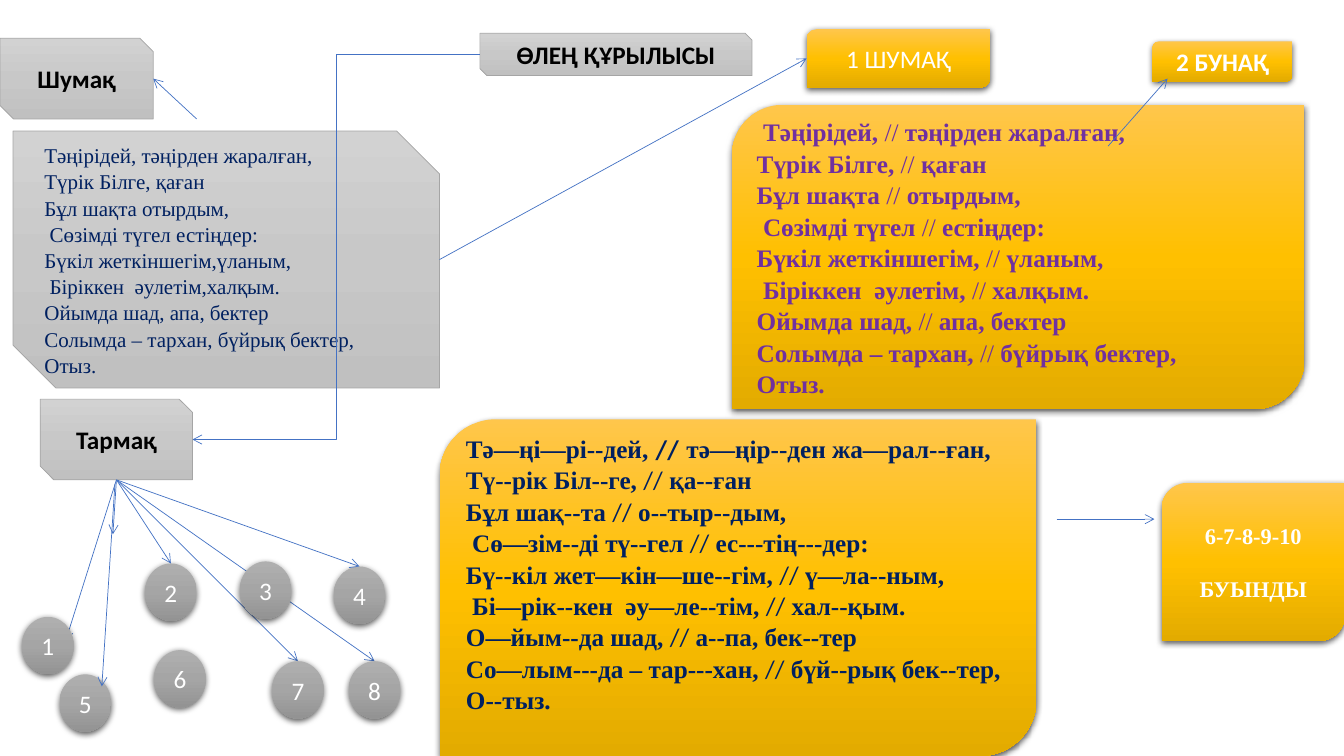
from copy import deepcopy

from lxml import etree
from pptx import Presentation, util as u
from pptx.dml.color import RGBColor
from pptx.enum import shapes, text
from pptx.oxml.ns import qn

PX = 9144
WHITE = RGBColor(0xFF, 0xFF, 0xFF)
BLACK = RGBColor(0x00, 0x00, 0x00)
NAVY = RGBColor(0x00, 0x20, 0x60)
PURPLE = RGBColor(0x70, 0x30, 0xA0)
BLUE = RGBColor(0x44, 0x72, 0xC4)
GREY = RGBColor(0xA5, 0xA5, 0xA5)
SILVER_STOPS = (RGBColor(0xD2, 0xD2, 0xD2), RGBColor(0xC8, 0xC8, 0xC8), RGBColor(0xC0, 0xC0, 0xC0))
GOLD_STOPS = (RGBColor(0xFF, 0xC6, 0x4B), RGBColor(0xFF, 0xC0, 0x00), RGBColor(0xE3, 0xAB, 0x00))
BALL_STOPS = (RGBColor(0xAF, 0xAF, 0xAF), GREY, RGBColor(0x93, 0x93, 0x93))
SANS, SERIF = "Calibri", "Times New Roman"
SNIP = shapes.MSO_SHAPE.SNIP_2_DIAG_RECTANGLE
ROUND = shapes.MSO_SHAPE.ROUND_2_DIAG_RECTANGLE
OVAL = shapes.MSO_SHAPE.OVAL
TOP, LEFT, BOTTOM, RIGHT = range(4)
SIDE_SHARES = {TOP: (0.5, 0), LEFT: (0, 0.5), BOTTOM: (0.5, 1), RIGHT: (1, 0.5)}

VERSE = """Тәңірідей, тәңірден жаралған,
Түрік Білге, қаған
Бұл шақта отырдым,
 Сөзімді түгел естіңдер:
Бүкіл жеткіншегім,үланым,
 Біріккен  әулетім,халқым.
Ойымда шад, апа, бектер
Солымда – тархан, бүйрық бектер,
Отыз.""".split("\n")
FEET = """ Тәңірідей, // тәңірден жаралған,
Түрік Білге, // қаған
Бұл шақта // отырдым,
 Сөзімді түгел // естіңдер:
Бүкіл жеткіншегім, // үланым,
 Біріккен  әулетім, // халқым.
Ойымда шад, // апа, бектер
Солымда – тархан, // бүйрық бектер,
Отыз.""".split("\n")
SYLLABLES = """Тә—ңі—рі--дей, // тә—ңір--ден жа—рал--ған,
Тү--рік Біл--ге, // қа--ған
Бұл шақ--та // о--тыр--дым,
 Сө—зім--ді тү--гел // ес---тің---дер:
Бү--кіл жет—кін—ше--гім, // ү—ла--ным,
 Бі—рік--кен  әу—ле--тім, // хал--қым.
О—йым--да шад, // а--па, бек--тер
Со—лым---да – тар---хан, // бүй--рық бек--тер,
О--тыз.""".split("\n")
BALLS = {1: (22, 612), 2: (144, 559), 3: (238, 557), 4: (331, 562),
         5: (59, 669), 6: (153, 645), 7: (270, 656), 8: (346, 656)}


def paint(shape, stops):
    """Fill a shape with a vertical gradient of three colours."""
    shape.fill.gradient()
    shape.fill.gradient_angle = 270
    stop_list = shape._element.spPr.find(".//" + qn("a:gsLst"))
    stop_list.insert(1, deepcopy(stop_list[0]))
    for stop, color, position in zip(shape.fill.gradient_stops, stops, (0, 0.5, 1)):
        stop.color.rgb = color
        stop.position = position


def add_box(page, kind, box, stops):
    """Add a gradient box: outlined when snipped, otherwise with a soft shadow."""
    shape = page.shapes.add_shape(kind, *(side * PX for side in box))
    paint(shape, stops)
    shape.shadow.inherit = False
    if kind == SNIP:
        shape.line.color.rgb = GREY
        shape.line.width = u.Pt(0.5)
        return shape
    shape.line.fill.background()
    effects = shape._element.spPr.find(qn("a:effectLst"))
    shadow = etree.SubElement(effects, qn("a:outerShdw"), blurRad="57150", dist="19050",
                              dir="5400000", algn="ctr", rotWithShape="0")
    color = etree.SubElement(shadow, qn("a:srgbClr"), val="000000")
    etree.SubElement(color, qn("a:alpha"), val="63000")
    return shape


def style(span, font, size, color, bold):
    """Format one run."""
    span.font.name, span.font.size = font, u.Pt(size)
    span.font.color.rgb, span.font.bold = color, bold


def write_label(shape, label, color=WHITE, bold=False, font=SANS, size=18, gap=0):
    """Write centred lines into a shape, with a gap in points between them."""
    frame = shape.text_frame
    frame.text = label
    frame.word_wrap = True
    frame.vertical_anchor = text.MSO_ANCHOR.MIDDLE
    for number, para in enumerate(frame.paragraphs):
        para.alignment = text.PP_ALIGN.CENTER
        para.space_before = u.Pt(gap if number else 0)
        style(para.runs[0], font, size, color, bold)


def add_verse(page, kind, box, stops, lines, size, color, bold, slash_fonts=(SERIF, SERIF)):
    """Add a card of verse whose slashes stay light, the first in a font of its own."""
    card = add_box(page, kind, box, stops)
    frame = card.text_frame
    frame.word_wrap = True
    frame.vertical_anchor = text.MSO_ANCHOR.MIDDLE
    for number, line in enumerate(lines):
        para = frame.add_paragraph() if number else frame.paragraphs[0]
        para.alignment = text.PP_ALIGN.LEFT
        para.line_spacing = 1.04
        for part in filter(None, line.partition("//")):
            span = para.add_run()
            span.text = part
            is_slash = part == "//"
            font = slash_fonts[min(number, 1)] if is_slash else SERIF
            style(span, font, size, color, bold and not is_slash)
    return card


def locate(end):
    """Give the position of an end: a point in px, or a shape and its side."""
    if isinstance(end[0], int):
        return [length * PX for length in end]
    shape, side = end
    across, down = SIDE_SHARES[side]
    return [int(shape.left + shape.width * across), int(shape.top + shape.height * down)]


def add_arrow(page, start, end, kind=shapes.MSO_CONNECTOR.STRAIGHT, behind=False):
    """Draw a thin arrow, joined to the shapes it touches."""
    arrow = page.shapes.add_connector(kind, *locate(start), *locate(end))
    arrow.line.color.rgb = BLUE
    arrow.line.width = u.Pt(0.5)
    etree.SubElement(arrow.line._get_or_add_ln(), qn("a:tailEnd"), type="arrow")
    etree.SubElement(arrow._element.spPr, qn("a:effectLst"))
    joints = arrow._element.nvCxnSpPr.cNvCxnSpPr
    for place, connect, name in ((start, arrow.begin_connect, "stCxn"),
                                 (end, arrow.end_connect, "endCxn")):
        if not isinstance(place[0], int):
            shape, side = place
            connect(shape, side)
            if shape.auto_shape_type != OVAL:
                getattr(joints, name).idx = 3 - side
    if behind:
        page.shapes._spTree.insert(2, arrow._element)


def add_heading(page, box):
    """Place the title on its plate and return the plate."""
    plate = add_box(page, SNIP, box, SILVER_STOPS)
    title = page.shapes.title
    title.left, title.top, title.width, title.height = (side * PX for side in box)
    write_label(title, "ӨЛЕҢ ҚҰРЫЛЫСЫ", BLACK, True)
    title.text_frame.auto_size = text.MSO_AUTO_SIZE.NONE
    page.shapes._spTree.append(title._element)
    return plate


def add_stanza(page, heading):
    """Add the stanza on the left with its two grey labels."""
    stanza = add_box(page, SNIP, (0, 38, 152, 80), SILVER_STOPS)
    write_label(stanza, "Шумақ", BLACK, True)
    verse = add_verse(page, SNIP, (13, 130, 423, 255), SILVER_STOPS, VERSE, 15, NAVY, False)
    row = add_box(page, SNIP, (40, 396, 151, 80), SILVER_STOPS)
    write_label(row, "Тармақ", BLACK, True)
    add_arrow(page, (195, 118), (stanza, RIGHT))
    add_arrow(page, (heading, LEFT), (row, RIGHT), shapes.MSO_CONNECTOR.ELBOW)
    return verse, row


def add_balls(page, row):
    """Add the eight numbered balls and the arrows that fan out to them."""
    balls = {}
    for number, corner in BALLS.items():
        balls[number] = add_box(page, OVAL, (*corner, 51, 57), BALL_STOPS)
        write_label(balls[number], str(number))
    hub = (row, BOTTOM)
    add_arrow(page, hub, (65, 636), behind=True)
    for number in (7, 8):
        add_arrow(page, hub, (balls[number], TOP), behind=True)
    for number in (2, 4):
        add_arrow(page, hub, (balls[number], TOP))
    add_arrow(page, hub, (112, 530))
    add_arrow(page, (114, 480), (101, 681))


def add_gold_cards(page, verse):
    """Add the gold cards that split the verse into feet and syllables."""
    feet = add_box(page, ROUND, (1143, 41, 139, 40), GOLD_STOPS)
    write_label(feet, "2 БУНАҚ", bold=True)
    stanza = add_box(page, ROUND, (800, 29, 182, 58), GOLD_STOPS)
    write_label(stanza, "1 ШУМАҚ")
    add_verse(page, ROUND, (726, 104, 568, 302), GOLD_STOPS, FEET, 18, PURPLE, True)
    card = add_verse(page, ROUND, (436, 416, 592, 334), GOLD_STOPS, SYLLABLES, 18, NAVY, True,
                     ("Cabin", SANS))
    card.text_frame.margin_bottom = 33 * PX
    count = add_box(page, ROUND, (1152, 479, 182, 157), GOLD_STOPS)
    write_label(count, "6-7-8-9-10\nБУЫНДЫ", bold=True, font=SERIF, size=16, gap=19)
    add_arrow(page, (verse, RIGHT), (stanza, LEFT))
    add_arrow(page, (1099, 145), (1158, 78))
    add_arrow(page, (1048, 515), (1145, 515))


def main():
    """Build the slide and save it."""
    deck = Presentation()
    deck.slide_width, deck.slide_height = 1333 * PX, 750 * PX
    page = deck.slides.add_slide(deck.slide_layouts[5])
    heading = add_heading(page, (476, 33, 270, 42))
    verse, row = add_stanza(page, heading)
    add_gold_cards(page, verse)
    add_balls(page, row)
    deck.save("out.pptx")


if __name__ == "__main__":
    main()
